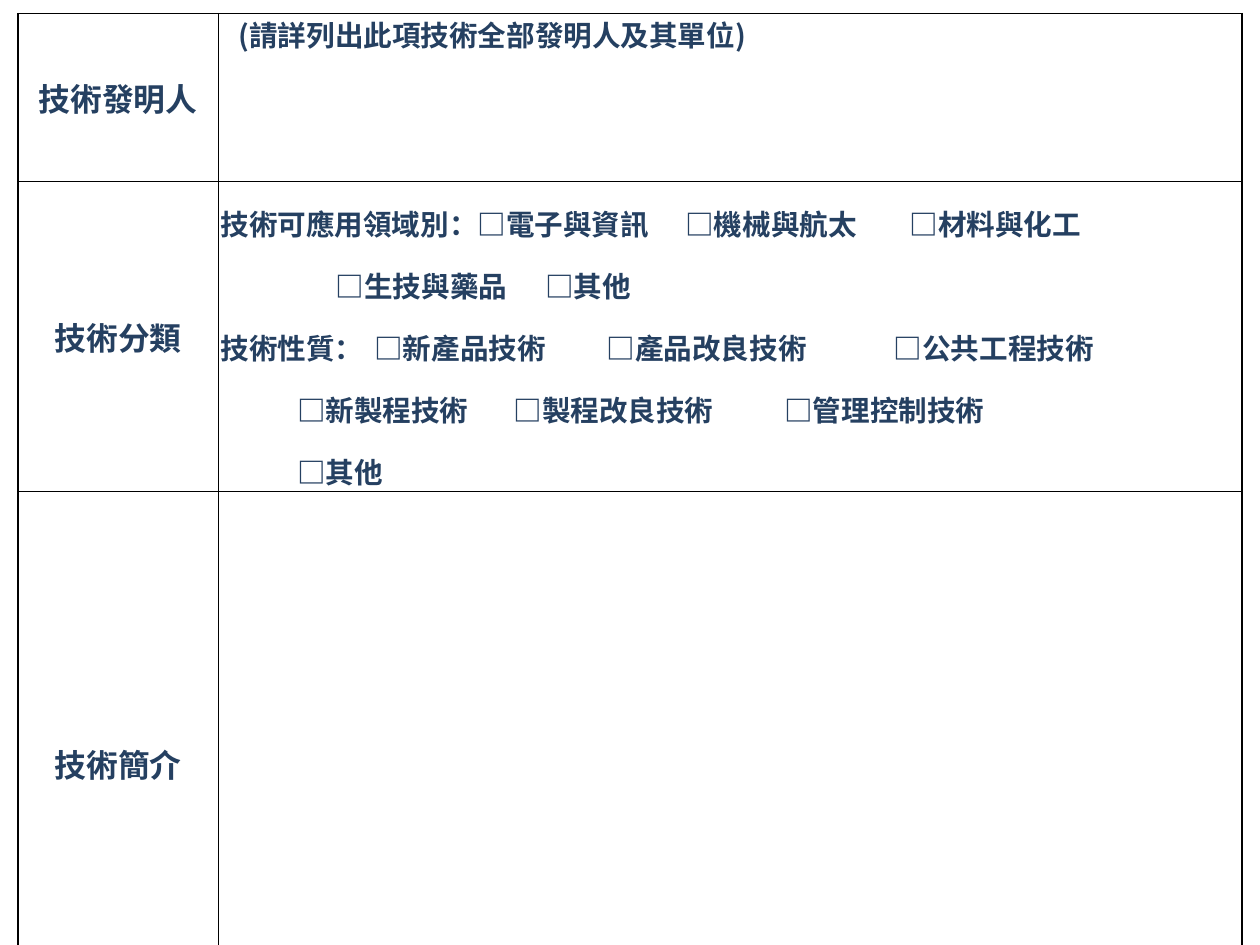
from lxml.etree import SubElement
from pptx import Presentation
from pptx.dml.color import RGBColor
from pptx.enum.text import MSO_ANCHOR, PP_ALIGN
from pptx.oxml.ns import qn
from pptx.util import Cm, Pt

INK = "254061"
BORDER = "000000"
FONT = "Noto Sans CJK SC"


def color(code):
    return RGBColor.from_string(code)


def add_text(para, text, size=18, bold=True, underline=False):
    span = para.add_run()
    span.text = text
    font = span.font
    font.size = Pt(size)
    font.bold = bold
    font.underline = underline
    font.color.rgb = color(INK)
    font.name = FONT
    SubElement(font._element, qn("a:ea"), typeface=FONT)


class FormPage:
    def __init__(self, deck):
        self.page = deck.slides.add_slide(deck.slide_layouts[6])

    def table(self, left, top, widths, heights):
        frame = self.page.shapes.add_table(
            len(heights), len(widths), Cm(left), Cm(top), Cm(sum(widths)), Cm(sum(heights)))
        table = frame.table
        table.first_row = False
        table.horz_banding = False
        for column, width in zip(table.columns, widths):
            column.width = Cm(width)
        for row, height in zip(table.rows, heights):
            row.height = Cm(height)
        for cell in table.iter_cells():
            self.style_cell(cell)
        return table

    def style_cell(self, cell):
        cell.margin_left = cell.margin_right = Cm(0.05)
        cell.margin_top = cell.margin_bottom = 0
        properties = cell._tc.get_or_add_tcPr()
        for side in ("lnL", "lnR", "lnT", "lnB"):
            line = SubElement(properties, qn(f"a:{side}"), w=str(Pt(1)))
            fill = SubElement(line, qn("a:solidFill"))
            SubElement(fill, qn("a:srgbClr"), val=BORDER)
        cell.fill.background()

    def label(self, cell, text):
        cell.vertical_anchor = MSO_ANCHOR.MIDDLE
        para = cell.text_frame.paragraphs[0]
        para.alignment = PP_ALIGN.CENTER
        add_text(para, text, size=20)

    def hint(self, cell, text, indent):
        para = cell.text_frame.paragraphs[0]
        para._p.get_or_add_pPr().set("indent", str(Cm(indent)))
        add_text(para, text)

    def options(self, cell, lines):
        frame = cell.text_frame
        for number, (text, stops, has_blank) in enumerate(lines):
            para = frame.add_paragraph() if number else frame.paragraphs[0]
            para.alignment = PP_ALIGN.JUSTIFY
            para.line_spacing = 1.5
            tabs = SubElement(para._p.get_or_add_pPr(), qn("a:tabLst"))
            for stop in stops:
                SubElement(tabs, qn("a:tab"), pos=str(Cm(stop)), algn="l")
            add_text(para, text)
            if has_blank:
                add_text(para, "\t", underline=True)


def main():
    deck = Presentation()
    deck.slide_width = Cm(28)
    deck.slide_height = Cm(21)
    form = FormPage(deck)
    table = form.table(0.4, 0.3, [4.45, 22.75], [3.73, 6.07, 12.1])
    for row, label in enumerate(["技術發明人", "技術分類", "技術簡介"]):
        form.label(table.cell(row, 0), label)
    form.hint(table.cell(0, 1), "(請詳列出此項技術全部發明人及其單位)", 0.4)
    form.options(table.cell(1, 1), [
        ("技術可應用領域別：□電子與資訊\t□機械與航太\t□材料與化工", [10.33, 15.31], False),
        ("\t□生技與藥品\t□其他", [2.56, 7.22, 13], True),
        ("技術性質：\t□新產品技術\t□產品改良技術\t□公共工程技術", [3.42, 8.58, 14.96], False),
        ("\t□新製程技術\t□製程改良技術\t□管理控制技術", [1.7, 6.51, 12.53], False),
        ("\t□其他", [1.7, 7.44], True),
    ])
    deck.save("out.pptx")


if __name__ == "__main__":
    main()
